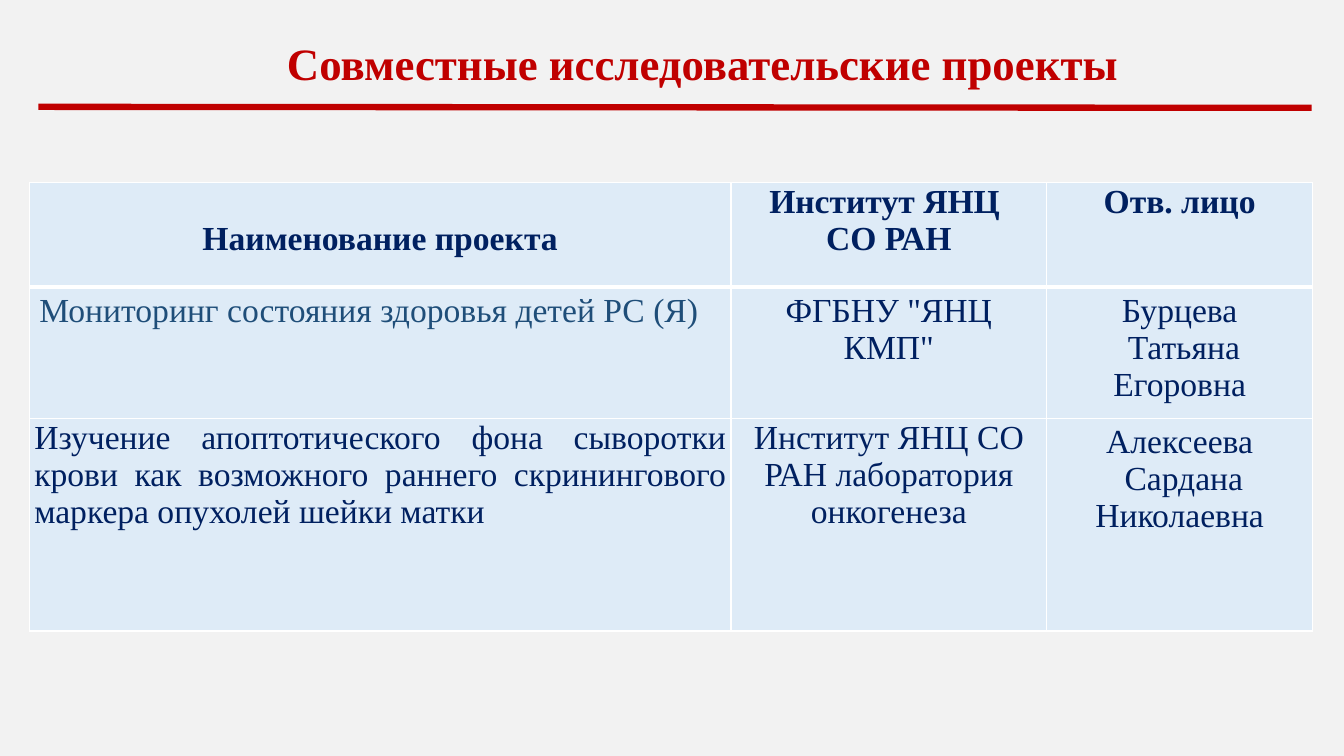
from dataclasses import dataclass

from lxml import etree
from pptx import Presentation
from pptx.dml.color import RGBColor
from pptx.enum.shapes import MSO_CONNECTOR
from pptx.enum.text import MSO_ANCHOR, PP_ALIGN
from pptx.oxml.ns import qn
from pptx.util import Inches, Pt

CENTER, JUSTIFY = PP_ALIGN.CENTER, PP_ALIGN.JUSTIFY
TOP = MSO_ANCHOR.TOP
STRAIGHT = MSO_CONNECTOR.STRAIGHT
TIGHT = (0.5, 0.1, 0.5, 0.1)
LOWERED = (0.5, 3.8, 0.5, 0.1)
ROOMY = (1, 0.5, 1, 0.5)


@dataclass(frozen=True)
class Theme:
    font: str = "Times New Roman"
    title_size: int = 32
    body_size: int = 24
    background: str = "F2F2F2"
    accent: str = "C00000"
    text: str = "002060"
    soft_text: str = "1F4E79"
    cell: str = "DEEBF7"
    border: str = "FFFFFF"


@dataclass(frozen=True)
class Entry:
    lines: tuple
    margins: tuple = ROOMY
    align: int = CENTER
    color: str = Theme.text


class Deck:
    columns, rows = 133.3, 75

    def __init__(self, theme):
        self.theme = theme
        self.prs = Presentation()
        self.prs.slide_width = self.unit(self.columns)
        self.prs.slide_height = self.unit(self.rows)
        self.s = self.prs.slides.add_slide(self.prs.slide_layouts[6])
        self.fill(self.s.background, theme.background)

    @staticmethod
    def unit(count):
        return Inches(count / 10)

    @staticmethod
    def fill(target, color):
        target.fill.solid()
        target.fill.fore_color.rgb = RGBColor.from_string(color)

    def set_text(self, tf, lines, size, color, bold, align):
        tf.word_wrap = True
        for i, line in enumerate(lines):
            p = tf.add_paragraph() if i else tf.paragraphs[0]
            p.text = line
            p.alignment = align
            p.font.name = self.theme.font
            p.font.size = Pt(size)
            p.font.bold = bold
            p.font.color.rgb = RGBColor.from_string(color)

    def title(self, text, *box):
        sp = self.s.shapes.add_textbox(*map(self.unit, box))
        self.set_text(sp.text_frame, [text], self.theme.title_size,
                      self.theme.accent, True, CENTER)

    def rule(self, width, *ends):
        sp = self.s.shapes.add_connector(STRAIGHT, *map(self.unit, ends))
        sp.line.color.rgb = RGBColor.from_string(self.theme.accent)
        sp.line.width = Pt(width)
        etree.SubElement(sp._element.spPr, qn("a:effectLst"))

    def borders(self, cell, top, bottom):
        tcPr = cell._tc.get_or_add_tcPr()
        widths = {"lnL": 1, "lnR": 1, "lnT": top, "lnB": bottom}
        for i, (side, width) in enumerate(widths.items()):
            ln = etree.Element(qn(f"a:{side}"), w=str(Pt(width)))
            solid = etree.SubElement(ln, qn("a:solidFill"))
            etree.SubElement(solid, qn("a:srgbClr"), val=self.theme.border)
            tcPr.insert(i, ln)

    def table(self, left, top, widths, heights, entries):
        box = left, top, sum(widths), sum(heights)
        table = self.s.shapes.add_table(
            len(heights), len(widths), *map(self.unit, box)).table
        for column, width in zip(table.columns, widths):
            column.width = self.unit(width)
        for row, height in zip(table.rows, heights):
            row.height = self.unit(height)
        for i, row in enumerate(entries):
            for j, entry in enumerate(row):
                cell = table.cell(i, j)
                self.fill(cell, self.theme.cell)
                self.borders(cell, 3 if i == 1 else 1, 3 if i == 0 else 1)
                cell.vertical_anchor = TOP
                (cell.margin_left, cell.margin_top, cell.margin_right,
                 cell.margin_bottom) = map(self.unit, entry.margins)
                self.set_text(cell.text_frame, entry.lines,
                              self.theme.body_size, entry.color, i == 0,
                              entry.align)


PROJECTS = [
    [Entry(("Наименование проекта",), LOWERED),
     Entry(("Институт ЯНЦ ", "СО РАН"), TIGHT),
     Entry(("Отв. лицо",), TIGHT)],
    [Entry(("Мониторинг состояния здоровья детей РС (Я)",),
           align=JUSTIFY, color=Theme.soft_text),
     Entry(('ФГБНУ "ЯНЦ КМП"',)),
     Entry(("Бурцева", " Татьяна", "Егоровна"))],
    [Entry(("Изучение апоптотического фона сыворотки крови как возможного "
            "раннего скринингового маркера опухолей шейки матки",),
           TIGHT, JUSTIFY),
     Entry(("Институт ЯНЦ СО РАН лаборатория онкогенеза",), TIGHT),
     Entry(("Алексеева", " Сардана", "Николаевна"))],
]


def main():
    deck = Deck(Theme())
    deck.title("Совместные исследовательские проекты", 13.5, 3.1, 112.4, 6.4)
    deck.table(2.9, 18.1, (69.6, 31.3, 26.4), (10.4, 13, 21.1), PROJECTS)
    deck.rule(4.5, 3.8, 10.6, 130.1, 10.7)
    deck.prs.save("out.pptx")


if __name__ == "__main__":
    main()
